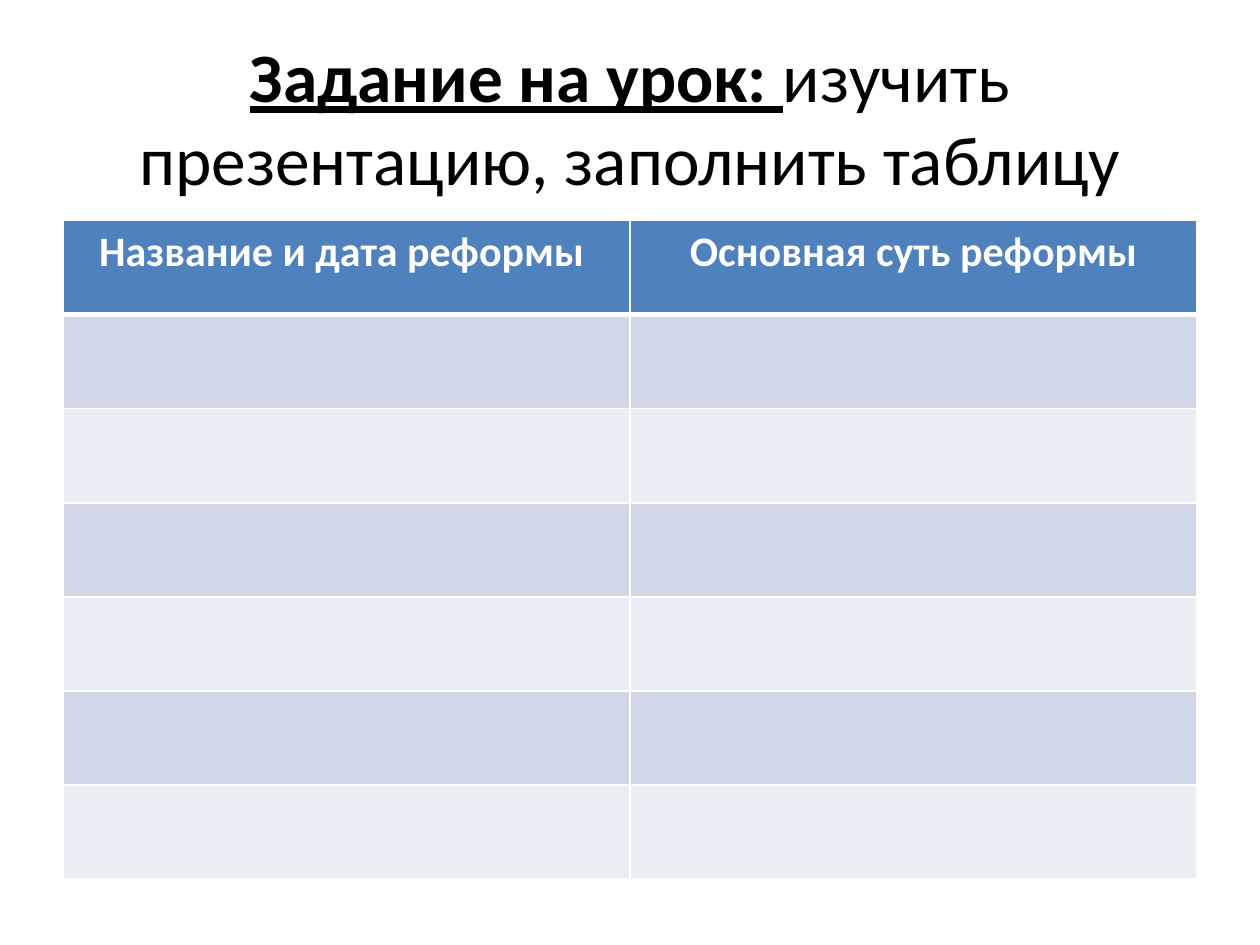
import pptx
import pptx.dml.color
import pptx.enum.text
import pptx.oxml
import pptx.oxml.ns
import pptx.util
from pptx.util import Inches

FONT = "Calibri"
HEADERS = ["Название и дата реформы ", "Основная суть реформы"]
BLANK_ROWS = 6
HEADER_FILL = "4F81BD"
BAND_FILLS = ["D0D8E8", "E9EDF4"]
WHITE = "FFFFFF"


def color(value):
    return pptx.dml.color.RGBColor.from_string(value)


def style_paragraph(p, size, font_color):
    p.alignment = pptx.enum.text.PP_ALIGN.CENTER
    p.font.name = FONT
    p.font.size = pptx.util.Pt(size)
    p.font.color.rgb = color(font_color)


def set_borders(cell, top, bottom):
    """Draw white cell borders; the widths are in points."""
    tc_pr = cell._tc.get_or_add_tcPr()
    widths = {"lnL": 1, "lnR": 1, "lnT": top, "lnB": bottom}
    for i, (side, width) in enumerate(widths.items()):
        line = pptx.oxml.parse_xml(
            f'<a:{side} {pptx.oxml.ns.nsdecls("a")} w="{pptx.util.Pt(width)}">'
            f'<a:solidFill><a:srgbClr val="{WHITE}"/></a:solidFill></a:{side}>'
        )
        tc_pr.insert(i, line)


def add_title(slide, left, top, width, height):
    tf = slide.shapes.add_textbox(left, top, width, height).text_frame
    tf.word_wrap = True
    tf.vertical_anchor = pptx.enum.text.MSO_ANCHOR.MIDDLE
    p = tf.paragraphs[0]
    style_paragraph(p, 39.6, "000000")
    r = p.add_run()
    r.text = "Задание на урок: "
    r.font.bold = True
    r.font.underline = True
    p.add_run().text = "изучить презентацию, заполнить таблицу"


def add_reform_table(slide, left, top, width, height):
    rows = BLANK_ROWS + 1
    table = slide.shapes.add_table(
        rows, len(HEADERS), left, top, width, height
    ).table

    # Header texts
    for cell, text in zip(table.rows[0].cells, HEADERS):
        p = cell.text_frame.paragraphs[0]
        p.text = text
        style_paragraph(p, 24, WHITE)
        p.font.bold = True

    # Fills and borders, with a thick rule below the header
    for i, row in enumerate(table.rows):
        fill = BAND_FILLS[(i - 1) % 2] if i else HEADER_FILL
        for cell in row.cells:
            cell.fill.solid()
            cell.fill.fore_color.rgb = color(fill)
            set_borders(cell, 3 if i == 1 else 1, 3 if i == 0 else 1)


def main():
    prs = pptx.Presentation()
    prs.slide_width = Inches(10)
    prs.slide_height = Inches(7.5)
    slide = prs.slides.add_slide(prs.slide_layouts[6])
    add_title(slide, Inches(0.5), Inches(0.3), Inches(9), Inches(1.25))
    add_reform_table(slide, Inches(0.5), Inches(1.75), Inches(9), Inches(5.23))
    prs.save("out.pptx")


if __name__ == "__main__":
    main()
